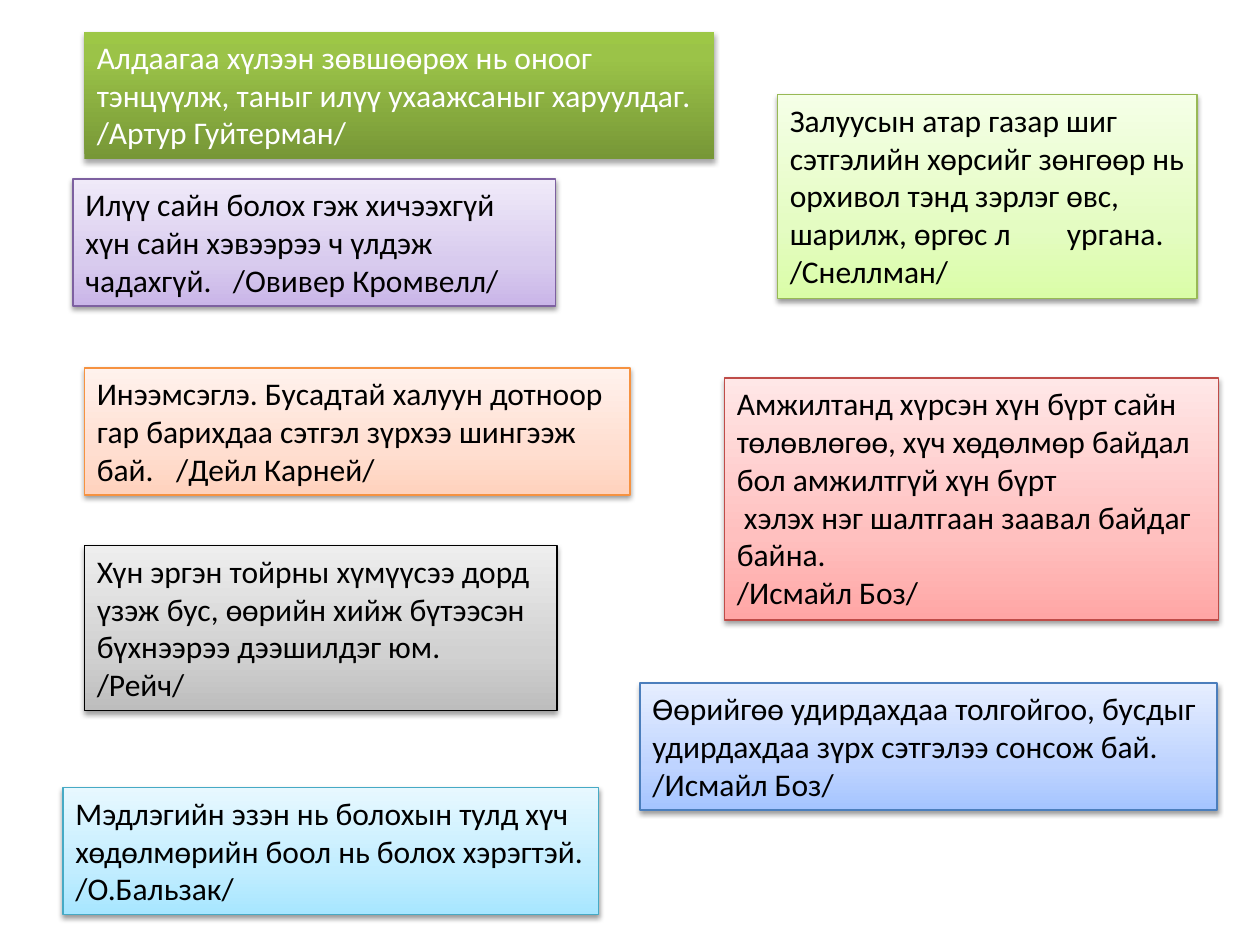
from lxml import etree
from pptx import Presentation
from pptx import util as u
from pptx.dml.color import RGBColor
from pptx.enum import text
from pptx.oxml import ns

BLACK = RGBColor(0, 0, 0)
WHITE = RGBColor(255, 255, 255)
PASTEL_STOPS = (0, 35, 100)
SOLID_STOPS = (0, 80, 100)


def colours(*codes):
    return [RGBColor.from_string(code) for code in codes]


GREEN = colours("DAFDA7", "E4FCC2", "F5FFE7", "98B955")
RED = colours("FFA6A5", "FFC0BF", "FFE7E7", "BF4C48")
BLUE = colours("A4C4FF", "BFD4FF", "E6EEFF", "4B7EBC")
AQUA = colours("A7E6FF", "C1EDFF", "E7F8FF", "46AAC5")
GREY = colours("BDBDBD", "D1D1D1", "EEEEEE", "000000")
ORANGE = colours("FFD2BD", "FFDED0", "FFF2ED", "F69240")
PURPLE = colours("C9B5E8", "D8CBEE", "F0EAF9", "7D60A0")
OLIVE = colours("779737", "9BC348", "9DC746")

QUOTES = [
    (6.17, 0.75, 3.33, 1.62, GREEN, 2.2,
     "Залуусын атар газар шиг сэтгэлийн хөрсийг зөнгөөр нь орхивол тэнд "
     "зэрлэг өвс, шарилж, өргөс л\tургана.\n/Снеллман/"),
    (5.75, 3, 3.92, 1.92, RED, None,
     "Амжилтанд хүрсэн хүн бүрт сайн төлөвлөгөө, хүч хөдөлмөр байдал бол "
     "амжилтгүй хүн бүрт\n хэлэх нэг шалтгаан заавал байдаг байна.\n/Исмайл Боз/"),
    (5.08, 5.42, 4.58, 1.01, BLUE, None,
     "Өөрийгөө удирдахдаа толгойгоо, бусдыг удирдахдаа зүрх сэтгэлээ "
     "сонсож бай.\n/Исмайл Боз/"),
    (0.5, 6.25, 4.25, 1.01, AQUA, None,
     "Мэдлэгийн эзэн нь болохын тулд хүч хөдөлмөрийн боол нь болох "
     "хэрэгтэй.\n/О.Бальзак/"),
    (0.67, 4.33, 3.75, 1.31, GREY, None,
     "Хүн эргэн тойрны хүмүүсээ дорд үзэж бус, өөрийн хийж бүтээсэн "
     "бүхнээрээ дээшилдэг юм.\n/Рейч/"),
    (0.67, 2.92, 4.33, 1.01, ORANGE, 0.63,
     "Инээмсэглэ. Бусадтай халуун дотноор гар барихдаа сэтгэл зүрхээ "
     "шингээж бай.\t/Дейл Карней/"),
    (0.58, 1.42, 3.83, 1.01, PURPLE, 1.17,
     "Илүү сайн болох гэж хичээхгүй хүн сайн хэвээрээ ч үлдэж "
     "чадахгүй.\t/Овивер Кромвелл/"),
    (0.67, 0.25, 5, 1.01, OLIVE, 1.28,
     "Алдаагаа хүлээн зөвшөөрөх нь оноог тэнцүүлж, таныг илүү ухаажсаныг "
     "харуулдаг.\t/Артур Гуйтерман/"),
]


class QuoteSlide:
    """Draws quotation boxes in one shared style on a slide."""

    font, size = "Calibri", u.Pt(18)

    def __init__(self, prs):
        self.s = prs.slides.add_slide(prs.slide_layouts[6])

    def element(self, parent, tag, **attrs):
        el = etree.SubElement(parent, ns.qn(tag))
        for name, value in attrs.items():
            el.set(name, str(value))
        return el

    def gradient(self, sp, shades, stops):
        sp.fill.gradient()
        sp.fill.gradient_angle = 90
        gs_list = sp._element.spPr.find(".//" + ns.qn("a:gsLst"))
        for gs in list(gs_list):
            gs_list.remove(gs)
        for shade, stop in zip(shades, stops):
            gs = self.element(gs_list, "a:gs", pos=stop * 1000)
            self.element(gs, "a:srgbClr", val=shade)

    def shadow(self, sp, distance, opacity):
        effects = self.element(sp._element.spPr, "a:effectLst")
        shadow = self.element(effects, "a:outerShdw", blurRad=u.Pt(3.1),
                              dist=u.Pt(distance), dir=5400000, rotWithShape=0)
        colour = self.element(shadow, "a:srgbClr", val=BLACK)
        self.element(colour, "a:alpha", val=opacity * 1000)

    def tab_stop(self, p, position):
        tabs = self.element(p._p.get_or_add_pPr(), "a:tabLst")
        self.element(tabs, "a:tab", pos=u.Inches(position), algn="l")

    def quote(self, left, top, width, height, palette, tab, words):
        sp = self.s.shapes.add_textbox(*map(u.Inches, (left, top, width, height)))
        solid = palette is OLIVE
        self.gradient(sp, palette[:3], SOLID_STOPS if solid else PASTEL_STOPS)
        if solid:
            sp.line.fill.background()
            self.shadow(sp, 1.8, 35)
        else:
            sp.line.color.rgb = palette[3]
            sp.line.width = u.Pt(0.75)
            self.shadow(sp, 1.6, 38)
        tf = sp.text_frame
        tf.word_wrap = True
        tf.auto_size = text.MSO_AUTO_SIZE.SHAPE_TO_FIT_TEXT
        p = tf.paragraphs[0]
        p.text = words
        if tab:
            self.tab_stop(p, tab)
        p.font.name, p.font.size = self.font, self.size
        p.font.color.rgb = WHITE if solid else BLACK


def main():
    prs = Presentation()
    prs.slide_width, prs.slide_height = u.Inches(10), u.Inches(7.5)
    slide = QuoteSlide(prs)
    for quote in QUOTES:
        slide.quote(*quote)
    prs.save("out.pptx")


if __name__ == "__main__":
    main()
